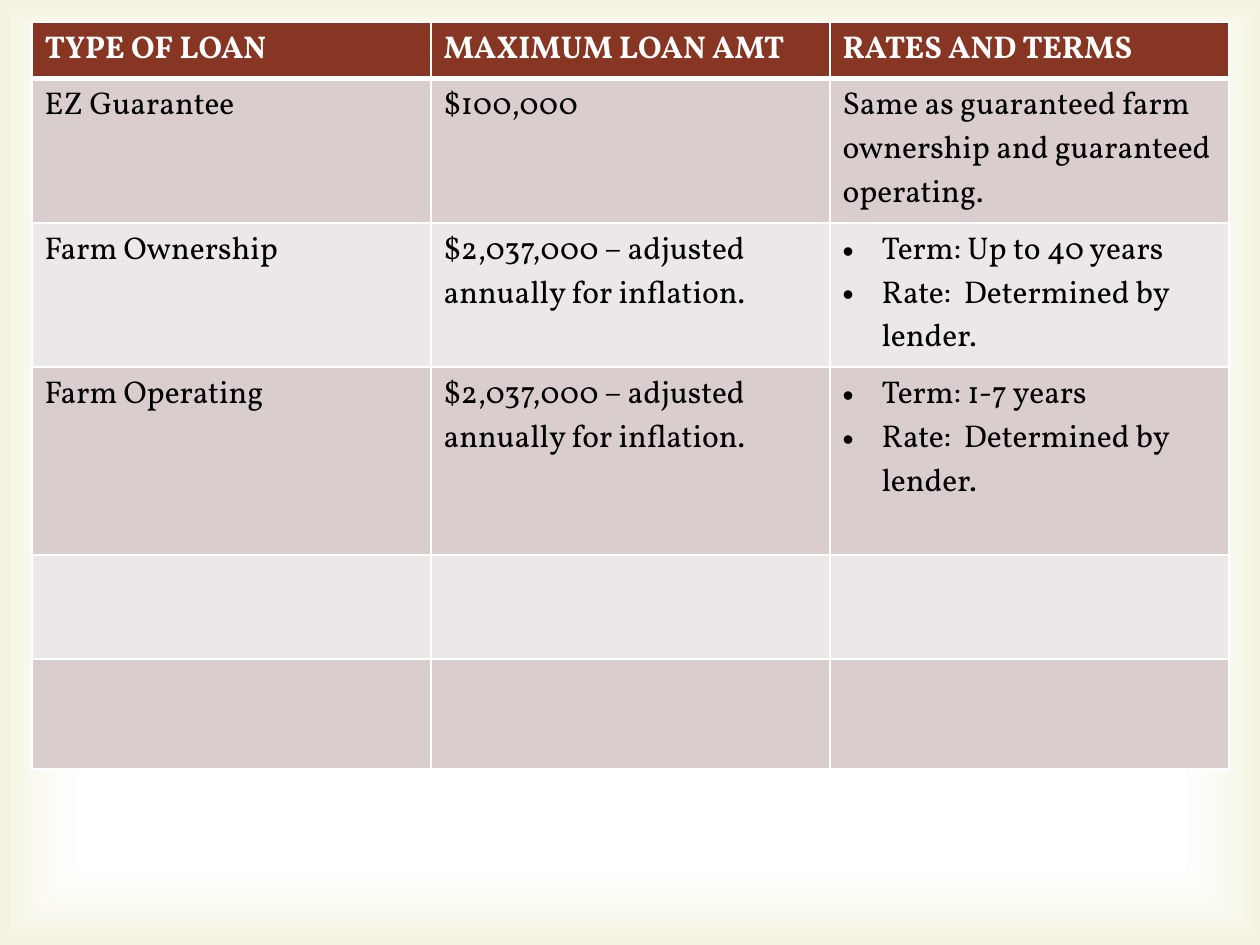
from dataclasses import dataclass

from lxml.etree import SubElement
from pptx import Presentation
from pptx.dml.color import RGBColor
from pptx.enum.shapes import MSO_SHAPE
from pptx.oxml import parse_xml
from pptx.oxml.ns import nsdecls, qn
from pptx.util import Pt

PX = 914400 / 126  # EMU per pixel


@dataclass(frozen=True)
class Theme:
    font: str = "Vollkorn"
    size: int = 18
    header_fill: str = "873624"
    header_text: str = "FFFFFF"
    band_fills: tuple = ("D9CECD", "EDE8E8")
    body_text: str = "000000"
    border: str = "FFFFFF"
    glow: str = "D1CA75"


THEME = Theme()
COLUMN_COUNT = 3
ROW_HEIGHTS = [55, 144, 144, 188, 104, 110]
BULLET_INDENT = 39
LOAN_LIMIT = "$2,037,000 – adjusted annually for inflation."
LENDER_RATE = "Rate:  Determined by lender."

# A list of strings is a bulleted cell
LOAN_ROWS = [
    ["TYPE OF LOAN", "MAXIMUM LOAN AMT", "RATES AND TERMS"],
    ["EZ Guarantee", "$100,000",
     "Same as guaranteed farm ownership and guaranteed operating."],
    ["Farm Ownership", LOAN_LIMIT, ["Term: Up to 40 years", LENDER_RATE]],
    ["Farm Operating", LOAN_LIMIT, ["Term: 1-7 years", LENDER_RATE]],
    [""] * COLUMN_COUNT,
    [""] * COLUMN_COUNT,
]


def px(length):
    return round(length * PX)


def add_glow(slide, left, top, width, height):
    """Soft frame that fades from the edges to a white middle."""
    shape = slide.shapes.add_shape(
        MSO_SHAPE.RECTANGLE, px(left), px(top), px(width), px(height))
    shape.shadow.inherit = False
    shape.line.fill.background()
    gradient = parse_xml(
        f'<a:gradFill {nsdecls("a")} rotWithShape="1"><a:gsLst>'
        '<a:gs pos="83000"><a:srgbClr val="FFFFFF"><a:alpha val="11000"/></a:srgbClr></a:gs>'
        f'<a:gs pos="100000"><a:srgbClr val="{THEME.glow}"><a:alpha val="23000"/></a:srgbClr></a:gs>'
        '</a:gsLst><a:path path="rect">'
        '<a:fillToRect l="50000" t="50000" r="50000" b="50000"/></a:path></a:gradFill>')
    shape._element.spPr.find(qn("a:prstGeom")).addnext(gradient)


def set_borders(cell, top, bottom):
    """Draw the four cell borders; widths are in points."""
    properties = cell._tc.get_or_add_tcPr()
    for side, width in (("L", 1), ("R", 1), ("T", top), ("B", bottom)):
        line = SubElement(properties, qn(f"a:ln{side}"), w=str(Pt(width)))
        fill = SubElement(line, qn("a:solidFill"))
        SubElement(fill, qn("a:srgbClr"), val=THEME.border)


def add_bullet(paragraph):
    properties = paragraph._p.get_or_add_pPr()
    properties.set("marL", str(px(BULLET_INDENT)))
    properties.set("indent", str(-px(BULLET_INDENT)))
    SubElement(properties, qn("a:buFont"), typeface="Arial")
    SubElement(properties, qn("a:buChar"), char="•")


def fill_cell(cell, content, row_index):
    is_header = row_index == 0
    set_borders(cell, top=3 if row_index == 1 else 1, bottom=3 if is_header else 1)
    band = THEME.band_fills[(row_index - 1) % 2]
    cell.fill.solid()
    cell.fill.fore_color.rgb = RGBColor.from_string(
        THEME.header_fill if is_header else band)
    if not content:
        return

    bulleted = isinstance(content, list)
    cell.text_frame.text = "\n".join(content) if bulleted else content
    for paragraph in cell.text_frame.paragraphs:
        if bulleted:
            add_bullet(paragraph)
        for run in paragraph.runs:
            run.font.name = THEME.font
            run.font.size = Pt(THEME.size)
            run.font.bold = is_header
            run.font.color.rgb = RGBColor.from_string(
                THEME.header_text if is_header else THEME.body_text)


def add_loan_table(slide, left, top, width):
    frame = slide.shapes.add_table(
        len(LOAN_ROWS), COLUMN_COUNT, px(left), px(top), px(width), px(sum(ROW_HEIGHTS)))
    table = frame.table
    for column in table.columns:
        column.width = px(width / COLUMN_COUNT)
    for row_index, (height, contents) in enumerate(zip(ROW_HEIGHTS, LOAN_ROWS)):
        table.rows[row_index].height = px(height)
        for column_index, content in enumerate(contents):
            fill_cell(table.cell(row_index, column_index), content, row_index)


def main():
    presentation = Presentation()
    presentation.slide_width, presentation.slide_height = px(1260), px(945)
    slide = presentation.slides.add_slide(presentation.slide_layouts[6])
    add_glow(slide, 0, 0, 1260, 945)
    add_loan_table(slide, 32, 22, 1197)
    presentation.save("out.pptx")


if __name__ == "__main__":
    main()
